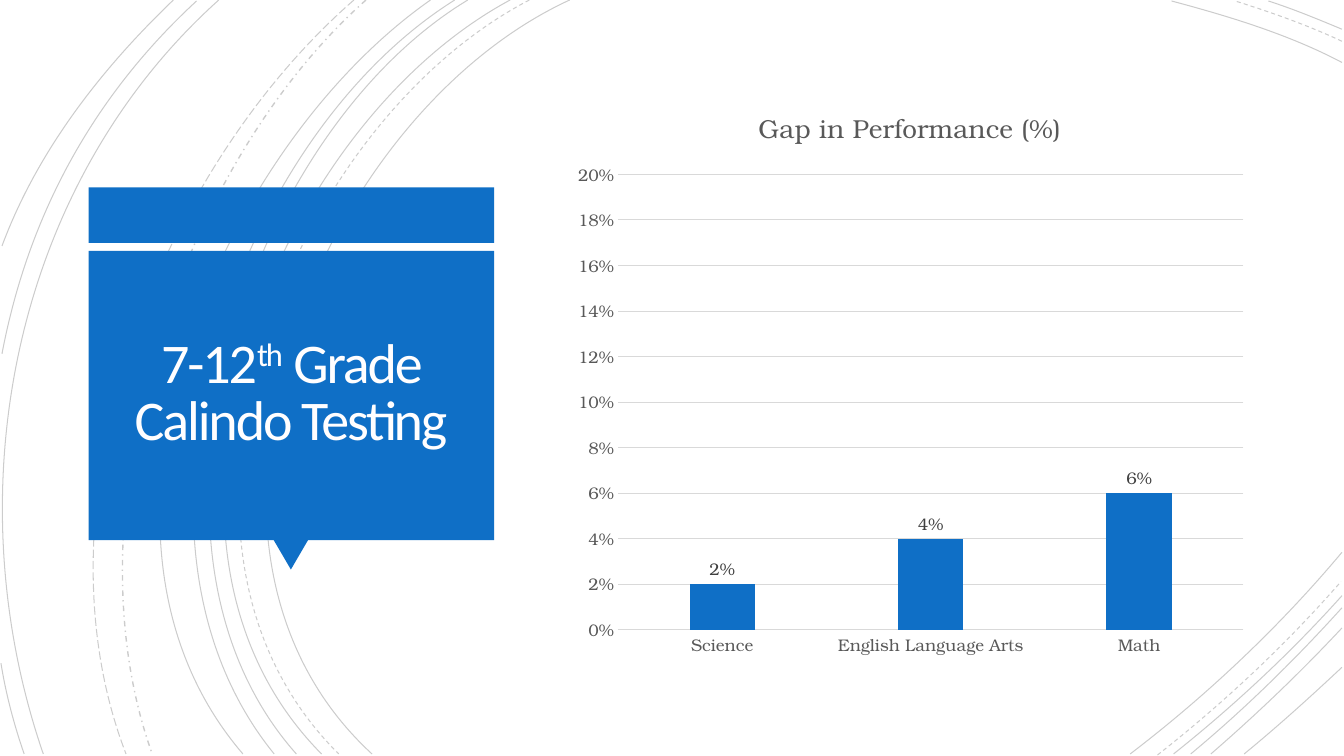
import pptx
import pptx.chart.data
import pptx.dml.color
import pptx.enum.chart
import pptx.enum.dml
import pptx.enum.shapes
import pptx.enum.text
import pptx.oxml
import pptx.oxml.ns
import pptx.util

PX = 9144  # EMU per px, 100 px to the inch
BLUE = pptx.dml.color.RGBColor(0x0F, 0x6F, 0xC6)
BLACK = pptx.dml.color.RGBColor(0, 0, 0)
TITLE_WHITE = pptx.dml.color.RGBColor(0xFF, 0xFE, 0xFF)
AXIS_GRAY = pptx.dml.color.RGBColor(0x59, 0x59, 0x59)
LABEL_GRAY = pptx.dml.color.RGBColor(0x40, 0x40, 0x40)
GRID_GRAY = pptx.dml.color.RGBColor(0xD9, 0xD9, 0xD9)
TITLE_FONT = "Calibri"
CHART_FONT = "TeX Gyre Bonum"

SOLID = pptx.enum.dml.MSO_LINE.SOLID
DASH = pptx.enum.dml.MSO_LINE.DASH
LONG_DASH = pptx.enum.dml.MSO_LINE.LONG_DASH
DASH_DOT = pptx.enum.dml.MSO_LINE.DASH_DOT

# Dash style, then start, two control points and end of each curve
ARCS = [
    (SOLID, (565, 0), (315, 115), (143, 540), (369, 748)),
    (SOLID, (1331, 62), (1278, 34), (1218, 16), (1162, 1)),
    (SOLID, (1121, 748), (1197, 690), (1269, 622), (1331, 548)),
    (DASH, (525, 0), (285, 125), (123, 537), (336, 748)),
    (DASH, (1331, 41), (1297, 25), (1260, 12), (1225, 1)),
    (DASH, (1148, 749), (1213, 698), (1275, 640), (1330, 577)),
    (SOLID, (506, 0), (270, 127), (110, 537), (319, 748)),
    (SOLID, (1331, 29), (1307, 19), (1283, 9), (1258, 1)),
    (SOLID, (1164, 748), (1223, 701), (1280, 648), (1331, 591)),
    (SOLID, (464, 0), (244, 133), (110, 541), (294, 748)),
    (SOLID, (1181, 748), (1234, 704), (1284, 655), (1331, 603)),
    (SOLID, (451, 0), (231, 138), (97, 533), (272, 748)),
    (SOLID, (1201, 748), (1246, 709), (1290, 667), (1331, 623)),
    (SOLID, (427, 0), (217, 147), (53, 529), (241, 748)),
    (SOLID, (1234, 748), (1267, 721), (1299, 692), (1331, 662)),
    (DASH_DOT, (363, 0), (176, 166), (65, 509), (151, 748)),
    (LONG_DASH, (351, 0), (157, 169), (29, 499), (125, 748)),
    (SOLID, (217, 0), (11, 185), (-46, 490), (43, 748)),
    (SOLID, (195, 1), (92, 96), (28, 214), (2, 351)),
    (SOLID, (1, 658), (6, 689), (14, 719), (24, 748)),
    (SOLID, (172, 0), (100, 69), (37, 150), (2, 244)),
]


def add_child(parent, tag, **attributes):
    child = pptx.oxml.parse_xml(f"<{tag} {pptx.oxml.ns.nsdecls(tag[0])}/>")
    for name, value in attributes.items():
        child.set(name, str(value))
    parent.append(child)
    return child


def add_arc(slide, left, top, dash, points):
    """Draw one cubic curve: the three line segments become its Bezier points."""
    points = [(left + x, top + y) for x, y in points]
    builder = slide.shapes.build_freeform(*points[0], scale=PX)
    builder.add_line_segments(points[1:], close=False)
    shape = builder.convert_to_shape()
    shape.shadow.inherit = False
    shape.fill.background()
    shape.line.color.rgb = BLACK
    shape.line.width = pptx.util.Pt(1 if dash == DASH_DOT else 0.75)
    shape.line.dash_style = dash
    add_child(shape._element.xpath(".//a:ln//a:srgbClr")[0], "a:alpha", val=20000)
    segments = shape._element.xpath(".//a:lnTo")
    curve = add_child(segments[0].getparent(), "a:cubicBezTo")
    for segment in segments:
        curve.append(segment[0])
        segment.getparent().remove(segment)


def add_background(slide, left, top):
    for dash, *points in ARCS:
        add_arc(slide, left, top, dash, points)


def add_block(slide, kind, left, top, width, height):
    shape = slide.shapes.add_shape(kind, left * PX, top * PX, width * PX, height * PX)
    shape.shadow.inherit = False
    shape.fill.solid()
    shape.fill.fore_color.rgb = BLUE
    shape.line.fill.background()
    return shape


def add_title_panel(slide, left, top, width):
    rectangle = pptx.enum.shapes.MSO_SHAPE.RECTANGLE
    triangle = pptx.enum.shapes.MSO_SHAPE.ISOSCELES_TRIANGLE
    add_block(slide, rectangle, left, top, width, 55)
    add_block(slide, triangle, left + 183, top + 349, 35, 30).rotation = 180
    add_block(slide, rectangle, left, top + 63, width, 287)

    title = slide.shapes.title
    slide.shapes._spTree.append(title._element)
    title.left, title.top = (left + 9) * PX, (top + 71) * PX
    title.width, title.height = (width - 19) * PX, 269 * PX
    frame = title.text_frame
    frame.word_wrap = True
    frame.auto_size = pptx.enum.text.MSO_AUTO_SIZE.NONE
    frame.vertical_anchor = pptx.enum.text.MSO_ANCHOR.MIDDLE
    frame.margin_left = frame.margin_right = 25 * PX
    frame.margin_top = frame.margin_bottom = 25 * PX
    paragraph = frame.paragraphs[0]
    paragraph.alignment = pptx.enum.text.PP_ALIGN.CENTER
    paragraph.line_spacing = 0.85
    for text, baseline in [("7-12", 0), ("th", 30000), (" Grade Calindo Testing", 0)]:
        run = paragraph.add_run()
        run.text = text
        set_font(run.font, TITLE_FONT, 40, TITLE_WHITE)
        properties = run._r.get_or_add_rPr()
        properties.set("spc", "-150")
        properties.set("baseline", str(baseline))


def set_font(font, name, size, color):
    font.name = name
    font.size = pptx.util.Pt(size)
    font.bold = False
    font.color.rgb = color


def set_layout(element, index, **fractions):
    """Place a chart part by fractions of the chart's own box."""
    for old_layout in element.xpath("./c:layout"):
        element.remove(old_layout)
    layout = add_child(element, "c:layout")
    element.insert(index, layout)
    manual = add_child(layout, "c:manualLayout")
    if "w" in fractions:
        add_child(manual, "c:layoutTarget", val="inner")
    for name in ("xMode", "yMode"):
        add_child(manual, f"c:{name}", val="edge")
    for name, value in fractions.items():
        add_child(manual, f"c:{name}", val=value)


def add_gap_chart(slide, left, top, width, height):
    data = pptx.chart.data.CategoryChartData(number_format="0%")
    data.categories = ["Science", "English Language Arts", "Math"]
    data.add_series("Series 1", [0.02, 0.04, 0.06])
    chart = slide.shapes.add_chart(
        pptx.enum.chart.XL_CHART_TYPE.COLUMN_CLUSTERED,
        left * PX, top * PX, width * PX, height * PX, data,
    ).chart
    chart.has_legend = False
    set_font(chart.font, CHART_FONT, 10, BLACK)

    chart.has_title = True
    run = chart.chart_title.text_frame.paragraphs[0].add_run()
    run.text = "Gap in Performance (%)"
    set_font(run.font, CHART_FONT, 18.6, AXIS_GRAY)
    set_layout(chart.chart_title._element, 1, x=0.273, y=0.023)
    plot_area = chart._chartSpace.xpath(".//c:plotArea")[0]
    set_layout(plot_area, 0, x=0.077, y=0.148, w=0.903, h=0.787)

    for axis in (chart.category_axis, chart.value_axis):
        axis.major_tick_mark = pptx.enum.chart.XL_TICK_MARK.NONE
        axis.minor_tick_mark = pptx.enum.chart.XL_TICK_MARK.NONE
        set_font(axis.tick_labels.font, CHART_FONT, 12, AXIS_GRAY)
    category_line = chart.category_axis.format.line
    category_line.color.rgb = GRID_GRAY
    category_line.width = pptx.util.Pt(0.75)
    value_axis = chart.value_axis
    value_axis.format.line.fill.background()
    value_axis.minimum_scale, value_axis.maximum_scale = 0, 0.2
    value_axis.major_unit = 0.02
    value_axis.tick_labels.number_format = "0%"
    value_axis.tick_labels.number_format_is_linked = False
    gridline = value_axis.major_gridlines.format.line
    gridline.color.rgb = GRID_GRAY
    gridline.width = pptx.util.Pt(0.5)

    plot = chart.plots[0]
    plot.vary_by_categories = False
    plot.gap_width, plot.overlap = 219, -27
    series = plot.series[0]
    series.format.fill.solid()
    series.format.fill.fore_color.rgb = BLUE
    labels = series.data_labels
    labels.show_value = True
    labels.number_format = "0%"
    labels.number_format_is_linked = False
    labels.position = pptx.enum.chart.XL_LABEL_POSITION.OUTSIDE_END
    set_font(labels.font, CHART_FONT, 12, LABEL_GRAY)


def main():
    presentation = pptx.Presentation()
    presentation.slide_width, presentation.slide_height = 1333 * PX, 750 * PX
    slide = presentation.slides.add_slide(presentation.slide_layouts[5])
    add_background(slide, 0, 0)
    add_title_panel(slide, 88, 186, 402)
    add_gap_chart(slide, 560, 88, 687, 574)
    presentation.save("out.pptx")


if __name__ == "__main__":
    main()
